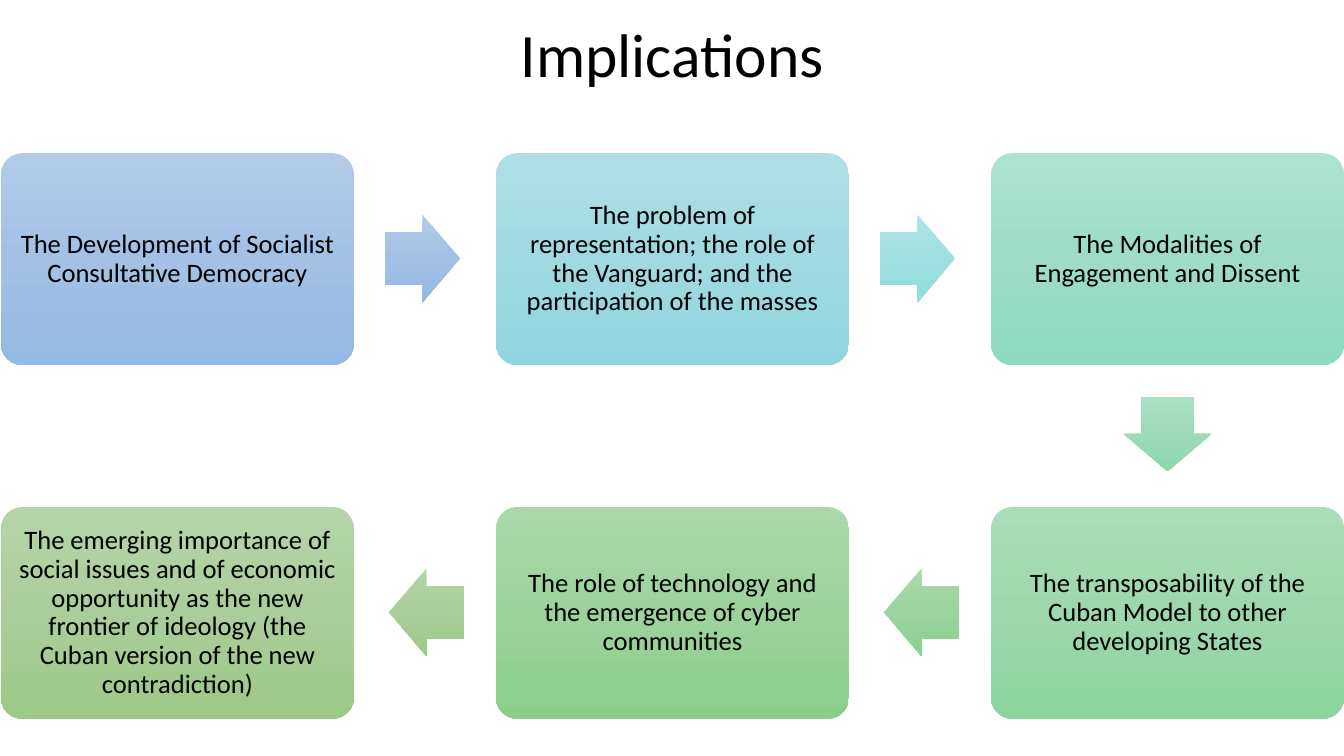
"""Build the Implications slide: six boxes joined by arrows in a winding flow."""
from lxml.etree import SubElement
from pptx import Presentation
from pptx.dml.color import RGBColor
from pptx.enum.shapes import MSO_SHAPE
from pptx.enum.text import MSO_ANCHOR, PP_ALIGN
from pptx.oxml.ns import qn
from pptx.util import Pt

PX = 9144
FONT = "Calibri"
BLACK = RGBColor(0x00, 0x00, 0x00)


def shades(*codes):
    return tuple(RGBColor.from_string(code) for code in codes)


BLUE = shades("B1CBE9", "A3C1E5", "93B9E4")
CYAN = shades("AEDFE6", "A1D9E0", "90D6DF")
AQUA = shades("AEE4E5", "A0DFDF", "8FDEDE")
TEAL = shades("ACE2D0", "9EDCC8", "8DDAC1")
MINT = shades("ABE0C3", "9DDAB9", "8CD8AF")
JADE = shades("AADEB8", "9DD7AD", "8BD59F")
FERN = shades("A9DAAB", "9BD49E", "89D18C")
GREEN = shades("A9D9A9", "9CD39B", "8ACF89")
OLIVE = shades("B5D5A7", "AACE9A", "9CC987")

BOX_WIDTH, BOX_HEIGHT = 350, 210
ARROW_WIDTH, ARROW_HEIGHT = 74, 87
LEFT, COLUMN_STEP = 1, 491
ROW_TOPS = (152, 503)
RIGHTWARD_OFFSET, LEFTWARD_OFFSET = 381, 385
DOWN_ARROW_TOP = 387

BOXES = (
    (0, 0, BLUE, "The Development of Socialist Consultative Democracy"),
    (1, 0, CYAN, "The problem of representation; the role of the Vanguard; "
                 "and the participation of the masses"),
    (2, 0, TEAL, "The Modalities of Engagement and Dissent"),
    (2, 1, JADE, "The transposability of the Cuban Model to other developing States"),
    (1, 1, GREEN, "The role of technology and the emergence of cyber communities"),
    (0, 1, OLIVE, "The emerging importance of social issues and of economic "
                  "opportunity as the new frontier of ideology (the Cuban version "
                  "of the new contradiction)"),
)


def column_left(column):
    return LEFT + column * COLUMN_STEP


def place(shape, left, top, width, height):
    shape.left, shape.top = left * PX, top * PX
    shape.width, shape.height = width * PX, height * PX


def format_text(text_frame, size):
    text_frame.word_wrap = True
    text_frame.vertical_anchor = MSO_ANCHOR.MIDDLE
    paragraph = text_frame.paragraphs[0]
    paragraph.alignment = PP_ALIGN.CENTER
    paragraph.line_spacing = 0.9
    font = paragraph.runs[0].font
    font.name, font.size = FONT, Pt(size)
    font.color.rgb = BLACK


def fill_downward(shape, colors):
    properties = shape._element.spPr
    gradient = SubElement(properties, qn("a:gradFill"), rotWithShape="0")
    stops = SubElement(gradient, qn("a:gsLst"))
    for position, color in zip((0, 50000, 100000), colors):
        stop = SubElement(stops, qn("a:gs"), pos=str(position))
        SubElement(stop, qn("a:srgbClr"), val=str(color))
    SubElement(gradient, qn("a:lin"), ang="5400000", scaled="0")
    shape.line.fill.background()
    shape.shadow.inherit = False


def add_title(slide, text):
    title = slide.shapes.title
    place(title, 92, 0, 1150, 115)
    title.text_frame.text = text
    format_text(title.text_frame, 44)


def add_box(slide, column, row, colors, text):
    box = slide.shapes.add_shape(MSO_SHAPE.ROUNDED_RECTANGLE, 0, 0, 0, 0)
    place(box, column_left(column), ROW_TOPS[row], BOX_WIDTH, BOX_HEIGHT)
    box.adjustments[0] = 0.1
    fill_downward(box, colors)
    frame = box.text_frame
    frame.text = text
    frame.margin_left = frame.margin_right = 8 * PX
    frame.margin_top = frame.margin_bottom = 8 * PX
    format_text(frame, 19)


def add_arrow(slide, left, top, colors, rotation=0):
    arrow = slide.shapes.add_shape(MSO_SHAPE.RIGHT_ARROW, 0, 0, 0, 0)
    place(arrow, left, top, ARROW_WIDTH, ARROW_HEIGHT)
    arrow.adjustments[0] = 0.6
    arrow.adjustments[1] = 0.5
    arrow.rotation = rotation
    fill_downward(arrow, colors)


def main():
    presentation = Presentation()
    presentation.slide_width, presentation.slide_height = 1333 * PX, 750 * PX
    slide = presentation.slides.add_slide(presentation.slide_layouts[5])
    add_title(slide, "Implications")
    for column, row, colors, text in BOXES:
        add_box(slide, column, row, colors, text)

    upper, lower = (top + (BOX_HEIGHT - ARROW_HEIGHT) // 2 for top in ROW_TOPS)
    for column, colors in enumerate((BLUE, AQUA)):
        add_arrow(slide, column_left(column) + RIGHTWARD_OFFSET, upper, colors)
    for column, colors in enumerate((OLIVE, FERN)):
        add_arrow(slide, column_left(column) + LEFTWARD_OFFSET, lower, colors, 180)
    middle = column_left(2) + (BOX_WIDTH - ARROW_WIDTH) // 2
    add_arrow(slide, middle, DOWN_ARROW_TOP, MINT, 90)
    presentation.save("out.pptx")


if __name__ == "__main__":
    main()
